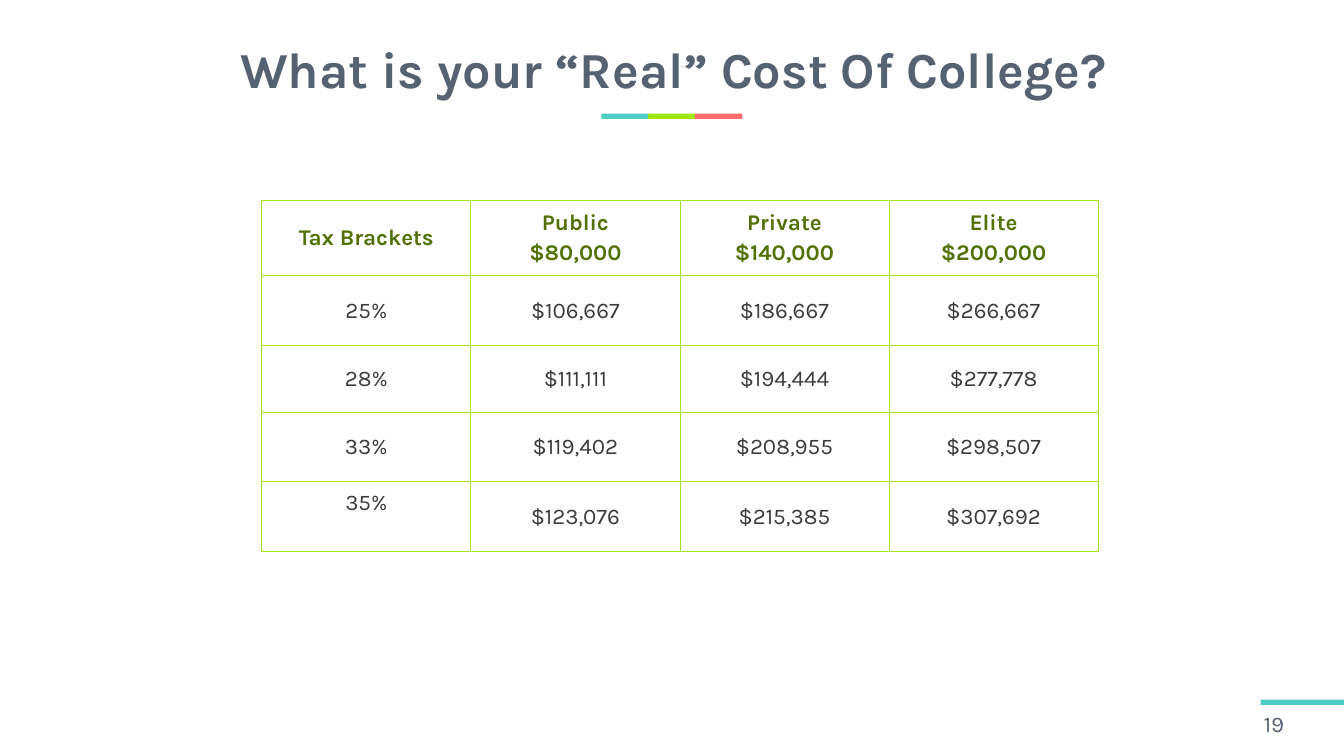
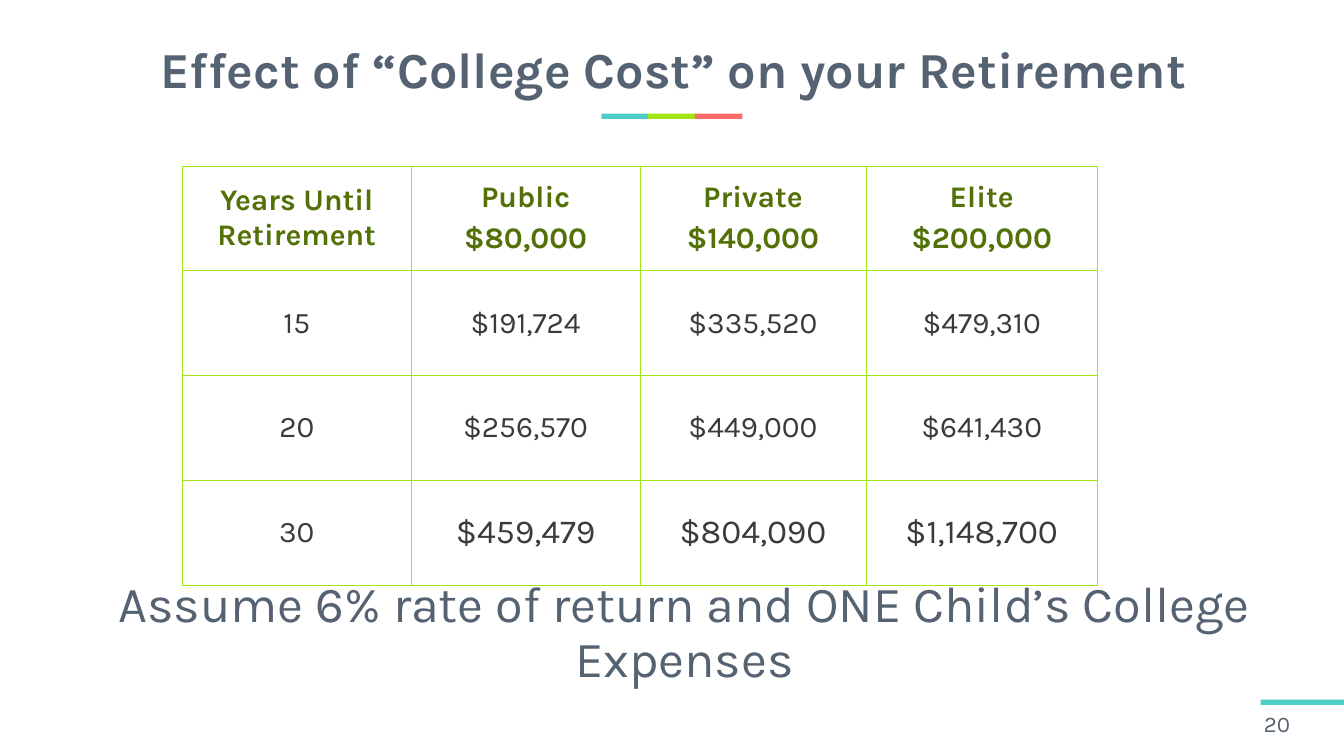
"""Build two slides on the real cost of college and its effect on retirement."""
from pptx import Presentation
from pptx.dml.color import RGBColor
from pptx.enum.shapes import MSO_SHAPE
from pptx.enum.text import MSO_ANCHOR, MSO_AUTO_SIZE, PP_ALIGN
from pptx.oxml import parse_xml
from pptx.oxml.ns import nsdecls
from pptx.util import Pt

RECTANGLE = MSO_SHAPE.RECTANGLE
MIDDLE = MSO_ANCHOR.MIDDLE
NO_FIT = MSO_AUTO_SIZE.NONE
LEFT, CENTER = PP_ALIGN.LEFT, PP_ALIGN.CENTER

FONT = "Karla"
TEAL, LIME, CORAL = "4ECDC4", "A3E511", "FF6B6B"
SLATE, OLIVE, CHARCOAL = "556272", "527208", "3B3B3B"

BARS = [(644.4, 121.7, 51, TEAL), (694.4, 121.7, 51, LIME),
        (744.4, 121.7, 51, CORAL), (1350.7, 749.5, 89.3, TEAL)]
COSTS = ["Public\n$80,000", "Private\n$140,000", "Elite\n$200,000"]

SLIDES = [
    {
        "title": "What is your “Real” Cost Of College?",
        "number": "19",
        "origin": (280.5, 214.7),
        "columns": [224] * 4,
        "heights": [80.7, 75, 71.6, 74.3, 75],
        "size": 24,
        "large": {},
        "raised": (4, 0),
        "margin": 3.2,
        "rows": [
            ["Tax Brackets", *COSTS],
            ["25%", "$106,667", "$186,667", "$266,667"],
            ["28%", "$111,111", "$194,444", "$277,778"],
            ["33%", "$119,402", "$208,955", "$298,507"],
            ["35%", "$123,076", "$215,385", "$307,692"],
        ],
        "assumption": None,
    },
    {
        "title": "Effect of “College Cost” on your Retirement",
        "number": "20",
        "origin": (195.4, 178),
        "columns": [245.2, 245.2, 242, 248.2],
        "heights": [112.2] * 4,
        "size": 32,
        "large": {(3, column): 36 for column in (1, 2, 3)},
        "raised": None,
        "margin": 3.6,
        "rows": [
            ["Years Until Retirement", *COSTS],
            ["15", "$191,724", "$335,520", "$479,310"],
            ["20", "$256,570", "$449,000", "$641,430"],
            ["30", "$459,479", "$804,090", "$1,148,700"],
        ],
        "assumption": "Assume 6% rate of return and ONE Child’s College Expenses",
    },
]


def paint(fill, color):
    fill.solid()
    fill.fore_color.rgb = RGBColor.from_string(color)


def write(frame, text, size=54, color=SLATE, bold=False, align=CENTER, spacing=None):
    frame.word_wrap = True
    for index, line in enumerate(text.split("\n")):
        paragraph = frame.add_paragraph() if index else frame.paragraphs[0]
        paragraph.alignment = align
        paragraph.line_spacing = spacing
        paragraph.space_before = Pt(0.2 * size if index else 0)
        run = paragraph.add_run()
        run.text = line
        run.font.name, run.font.size, run.font.bold = FONT, Pt(size), bold
        paint(run.font.fill, color)


deck = Presentation()
deck.slide_width, deck.slide_height = Pt(1440), Pt(810)
title_only = deck.slide_layouts[5]

for content in SLIDES:
    slide = deck.slides.add_slide(title_only)
    paint(slide.background.fill, "FFFFFF")

    for left, top, width, color in BARS:
        bar = slide.shapes.add_shape(RECTANGLE, Pt(left), Pt(top), Pt(width), Pt(5.8))
        bar.shadow.inherit = False
        paint(bar.fill, color)
        bar.line.fill.background()

    title = slide.shapes.title
    title.left, title.top, title.width, title.height = Pt(39), Pt(27.4), Pt(1365), Pt(100.8)
    title.text_frame.auto_size = NO_FIT
    title.text_frame.vertical_anchor = MIDDLE
    write(title.text_frame, content["title"], bold=True, spacing=0.9)

    page_number = slide.shapes.add_textbox(Pt(1347), Pt(756), Pt(93), Pt(38))
    page_number.text_frame.vertical_anchor = MIDDLE
    write(page_number.text_frame, content["number"], size=24, align=LEFT)

    rows, columns, heights = content["rows"], content["columns"], content["heights"]
    left, top = content["origin"]
    cost_table = slide.shapes.add_table(
        len(rows), len(columns), Pt(left), Pt(top), Pt(sum(columns)), Pt(sum(heights))).table
    for column, width in zip(cost_table.columns, columns):
        column.width = Pt(width)
    for row, height in zip(cost_table.rows, heights):
        row.height = Pt(height)

    for row_index, row in enumerate(rows):
        for column_index, text in enumerate(row):
            place = (row_index, column_index)
            header = row_index == 0
            cell = cost_table.cell(*place)
            cell.fill.background()
            cell.vertical_anchor = MIDDLE
            cell.margin_left = cell.margin_right = Pt(6.5)
            cell.margin_top = Pt(content["margin"])
            cell.margin_bottom = Pt(33 if place == content["raised"] else content["margin"])
            write(cell.text_frame, text, size=content["large"].get(place, content["size"]),
                  color=OLIVE if header else CHARCOAL, bold=header)
            properties = cell._tc.get_or_add_tcPr()
            for position, side in enumerate("LRTB"):
                properties.insert(position, parse_xml(
                    f'<a:ln{side} {nsdecls("a")} w="{Pt(1)}"><a:solidFill>'
                    f'<a:srgbClr val="{LIME}"/></a:solidFill></a:ln{side}>'))

    if content["assumption"]:
        assumption = slide.shapes.add_textbox(Pt(51), Pt(628.6), Pt(1365), Pt(100.8))
        assumption.text_frame.vertical_anchor = MIDDLE
        write(assumption.text_frame, content["assumption"], spacing=0.9)

deck.save("out.pptx")
